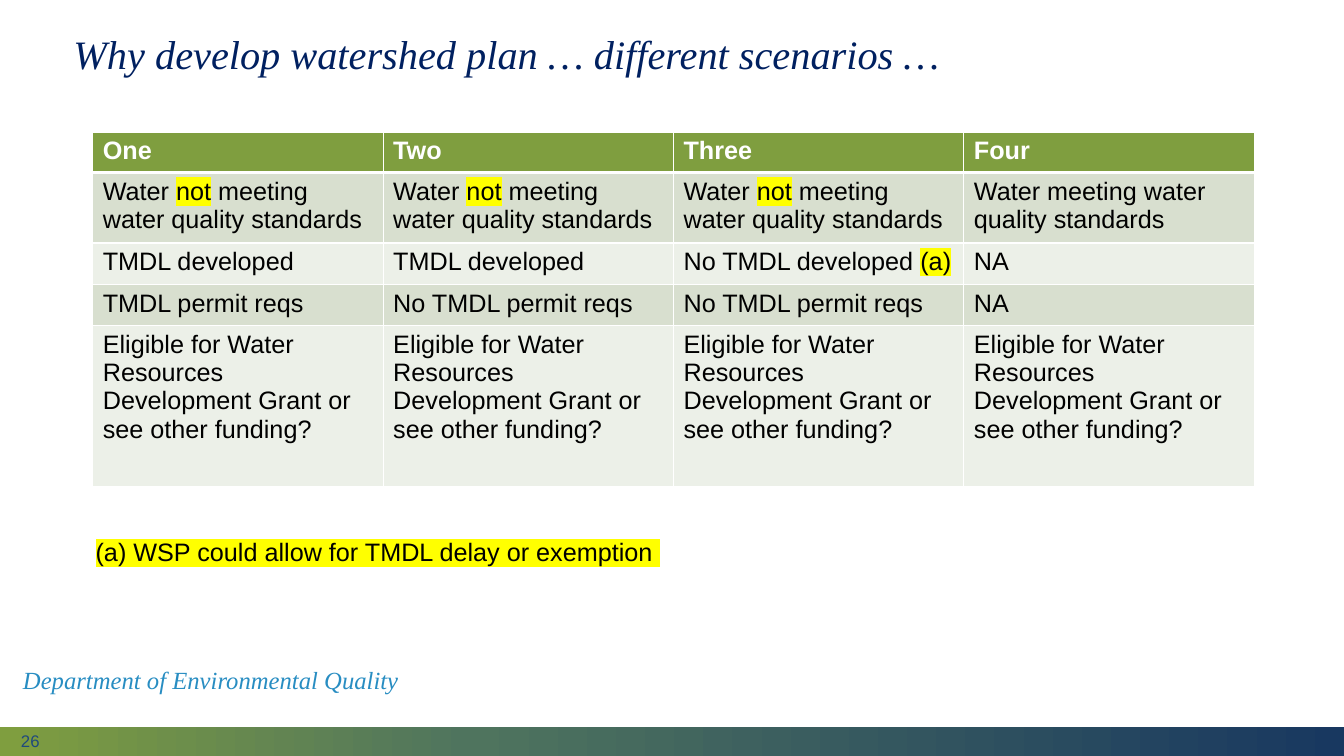
from copy import deepcopy
from dataclasses import dataclass

from lxml.etree import SubElement
from pptx import Presentation
from pptx.dml.color import RGBColor
from pptx.enum.shapes import MSO_SHAPE
from pptx.enum.text import MSO_ANCHOR
from pptx.oxml import parse_xml
from pptx.oxml.ns import nsdecls, qn
from pptx.util import Inches, Pt

COLORS = {
    "white": "FFFFFF", "black": "000000", "highlight": "FFFF00",
    "green": "7F9E3F", "teal": "4F745E", "navy": "183860",
    "band_dark": "D8DFCF", "band_light": "ECF0E8",
    "title": "002060", "department": "288DC2", "number": "1F497D",
}
SERIF = {"name": "Times New Roman", "italic": True}
SANS = {"name": "Arial", "size": Pt(18)}
MARK = "|"  # encloses highlighted words

COLUMN_WIDTH = 2.88
ROW_HEIGHTS = (0.4, 0.7, 0.41, 0.41, 1.6)
NOT_MEETING = "Water |not| meeting water quality standards"
ELIGIBLE = "Eligible for Water Resources Development Grant or see other funding?"
SCENARIOS = (
    ("One", "Two", "Three", "Four"),
    (NOT_MEETING,) * 3 + ("Water meeting water quality standards",),
    ("TMDL developed", "TMDL developed", "No TMDL developed |(a)|", "NA"),
    ("TMDL permit reqs", "No TMDL permit reqs", "No TMDL permit reqs", "NA"),
    (ELIGIBLE,) * 4,
)


@dataclass
class Label:
    text: str
    left: float
    top: float
    width: float
    height: float
    color: str
    font: dict
    line_spacing: float = 1.0
    inset: float = 0.05


LABELS = (
    Label("26", 0.11, 7.27, 3, 0.15, "number", SANS | {"size": Pt(12)}, inset=0),
    Label("Department of Environmental Quality", 0.13, 6.56, 4.1, 0.41,
          "department", SERIF | {"size": Pt(17.6)}, 0.9),
    Label("Why develop watershed plan … different scenarios …",
          0.63, 0.25, 9.36, 0.61, "title", SERIF | {"size": Pt(28.8)}, 0.9),
    Label("|(a) WSP could allow for TMDL delay or exemption |",
          0.85, 5.27, 6.78, 0.4, "black", SANS),
)


def rgb(color: str) -> RGBColor:
    return RGBColor.from_string(COLORS[color])


def write(paragraph, text: str, color: str, font: dict) -> None:
    for index, words in enumerate(text.split(MARK)):
        if not words:
            continue
        run = paragraph.add_run()
        run.text = words
        run.font.color.rgb = rgb(color)
        for attribute, value in font.items():
            setattr(run.font, attribute, value)
        if index % 2:
            highlight = parse_xml(
                f'<a:highlight {nsdecls("a")}><a:srgbClr val="{COLORS["highlight"]}"/></a:highlight>')
            run._r.rPr.find(qn("a:solidFill")).addnext(highlight)


def add_label(slide, label: Label) -> None:
    frame = slide.shapes.add_textbox(
        Inches(label.left), Inches(label.top),
        Inches(label.width), Inches(label.height)).text_frame
    layout = {"word_wrap": True, "vertical_anchor": MSO_ANCHOR.MIDDLE,
              "margin_top": Inches(label.inset), "margin_bottom": Inches(label.inset)}
    for attribute, value in layout.items():
        setattr(frame, attribute, value)
    frame.paragraphs[0].line_spacing = label.line_spacing
    write(frame.paragraphs[0], label.text, label.color, label.font)


def add_footer_band(slide) -> None:
    band = slide.shapes.add_shape(
        MSO_SHAPE.RECTANGLE, 0, Inches(7.21), Inches(13.33), Inches(0.3))
    band.shadow.inherit = False
    band.line.fill.background()
    band.fill.gradient()
    band.fill.gradient_angle = 0
    first_stop = band.element.find(".//" + qn("a:gs"))
    first_stop.addnext(deepcopy(first_stop))
    stops = ((0, "green"), (0.35, "teal"), (1, "navy"))
    for stop, (position, color) in zip(band.fill.gradient_stops, stops):
        stop.position = position
        stop.color.rgb = rgb(color)


def set_borders(cell, bottom: float) -> None:
    properties = cell._tc.get_or_add_tcPr()
    widths = {"lnL": 1, "lnR": 1, "lnT": 1, "lnB": bottom}
    for side, width in widths.items():
        line = SubElement(properties, qn(f"a:{side}"), w=str(Pt(width)))
        fill = SubElement(line, qn("a:solidFill"))
        SubElement(fill, qn("a:srgbClr"), val=COLORS["white"])


def add_scenarios(slide) -> None:
    scenarios = slide.shapes.add_table(
        len(SCENARIOS), len(SCENARIOS[0]), Inches(0.92), Inches(1.31),
        Inches(COLUMN_WIDTH * len(SCENARIOS[0])), Inches(sum(ROW_HEIGHTS))).table
    for column in scenarios.columns:
        column.width = Inches(COLUMN_WIDTH)
    for row_index, (texts, height) in enumerate(zip(SCENARIOS, ROW_HEIGHTS)):
        scenarios.rows[row_index].height = Inches(height)
        header = row_index == 0
        band = "green" if header else "band_dark" if row_index % 2 else "band_light"
        for column_index, text in enumerate(texts):
            cell = scenarios.cell(row_index, column_index)
            set_borders(cell, 3 if header else 1)
            cell.fill.solid()
            cell.fill.fore_color.rgb = rgb(band)
            write(cell.text_frame.paragraphs[0], text,
                  "white" if header else "black", SANS | {"bold": header})


def main() -> None:
    deck = Presentation()
    deck.slide_width, deck.slide_height = Inches(13.33), Inches(7.5)
    slide = deck.slides.add_slide(deck.slide_layouts[6])

    # Footer band, then the text and the scenario table
    add_footer_band(slide)
    for label in LABELS:
        add_label(slide, label)
    add_scenarios(slide)
    deck.save("out.pptx")


if __name__ == "__main__":
    main()
